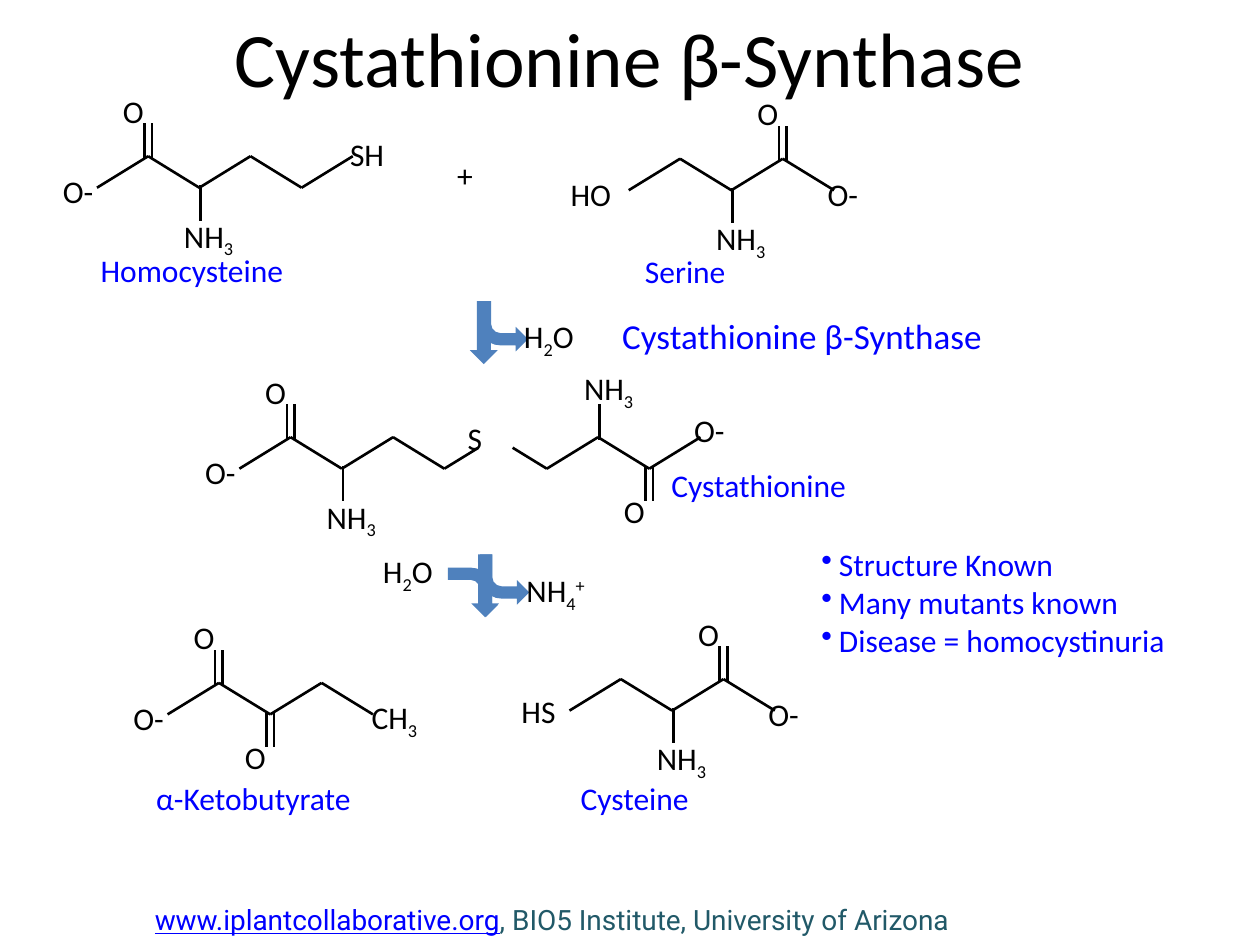
from dataclasses import dataclass

import pptx
import pptx.dml.color
import pptx.enum.shapes
import pptx.enum.text
import pptx.oxml
import pptx.oxml.ns
import pptx.util
from pptx.util import Inches

SHAPES = pptx.enum.shapes.MSO_SHAPE
ANCHOR = pptx.enum.text.MSO_ANCHOR
ALIGN = pptx.enum.text.PP_ALIGN


@dataclass(frozen=True)
class Theme:
    black: str = "000000"
    blue: str = "0000FF"
    teal: str = "215968"
    arrow: str = "4F81BD"
    font: str = "Calibri"
    footer_font: str = "Roboto"
    title_size: int = 44
    enzyme_size: int = 20
    body_size: int = 18
    footer_size: int = 16
    bond_width: float = 1.5


THEME = Theme()

# Each formula is a series of (text, baseline shift in percent).
AMINO = (("NH", 0), ("3", -25))
METHYL = (("CH", 0), ("3", -25))
WATER = (("H", 0), ("2", -25), ("O", 0))
AMMONIUM = (("NH", 0), ("4", -25), ("+", 30))

BOND_RISE = 0.25
SIDE_BOND = 0.28
# (is double, points up) -> label offset from the carbon
SIDE_LABEL_OFFSETS = {
    (True, True): (-0.3, -0.56),
    (True, False): (-0.3, 0.14),
    (False, True): (-0.21, -0.59),
    (False, False): (-0.22, 0.18),
}


def add_run(paragraph, text, color=THEME.black, baseline=0, **formats):
    run = paragraph.add_run()
    run.text = text
    values = {"name": THEME.font, "size": pptx.util.Pt(THEME.body_size), **formats}
    for attribute, value in values.items():
        setattr(run.font, attribute, value)
    run.font.color.rgb = pptx.dml.color.RGBColor.from_string(color)
    if baseline:
        run.font._element.set("baseline", str(baseline * 1000))


def add_text_box(shapes, box, anchor=ANCHOR.TOP):
    frame = shapes.add_textbox(*map(Inches, box)).text_frame
    frame.word_wrap = True
    frame.vertical_anchor = anchor
    return frame


def add_label(shapes, left, top, content, width=0.72, color=THEME.black):
    """Place a plain text or a formula."""
    pieces = ((content, 0),) if isinstance(content, str) else content
    paragraph = add_text_box(shapes, (left, top, width, 0.4)).paragraphs[0]
    for text, baseline in pieces:
        add_run(paragraph, text, color, baseline)


def add_bond(shapes, start, end):
    bond = shapes.add_connector(
        pptx.enum.shapes.MSO_CONNECTOR.STRAIGHT, *map(Inches, (*start, *end))
    )
    bond.line.color.rgb = pptx.dml.color.RGBColor.from_string(THEME.black)
    bond.line.width = pptx.util.Pt(THEME.bond_width)
    bond._element.spPr.append(pptx.oxml.parse_xml(
        f'<a:effectLst {pptx.oxml.ns.nsdecls("a")}/>'
    ))


def add_molecule(slide, box, bonds, side_groups, labels, gap_atom=None):
    """Draw a zigzag chain that starts low; odd atoms sit high.

    box is the chain's left, top and width. side_groups maps an atom to its
    side formula, labels maps an atom to (formula, x offset, y offset), and
    the bonds that meet gap_atom are cut short to leave room for its letter.
    """
    shapes = slide.shapes.add_group_shape().shapes
    left, top, width = box
    atoms = [
        (left + i * width / bonds, top + (0 if i % 2 else BOND_RISE))
        for i in range(bonds + 1)
    ]

    def shorten(point, far):
        return tuple(p + (f - p) / 3 for p, f in zip(point, far))

    for i, (start, end) in enumerate(zip(atoms, atoms[1:])):
        if i == gap_atom:
            start = shorten(start, end)
        elif i + 1 == gap_atom:
            end = shorten(end, start)
        add_bond(shapes, start, end)

    for i, formula in side_groups.items():
        x, y = atoms[i]
        up, double = bool(i % 2), formula == "O"
        direction = -1 if up else 1
        begin = y - 0.02 * direction
        for offset in (-0.03, 0.03) if double else (0.01,):
            add_bond(shapes, (x + offset, begin),
                     (x + offset, begin + SIDE_BOND * direction))
        dx, dy = SIDE_LABEL_OFFSETS[double, up]
        add_label(shapes, x + dx, y + dy, formula)

    for i, (formula, dx, dy) in labels.items():
        add_label(shapes, atoms[i][0] + dx, atoms[i][1] + dy, formula)


def add_arrow(shapes, kind, box, rotation=0, flip=False):
    arrow = shapes.add_shape(kind, *map(Inches, box))
    arrow.shadow.inherit = False
    arrow.fill.solid()
    arrow.fill.fore_color.rgb = pptx.dml.color.RGBColor.from_string(THEME.arrow)
    arrow.line.fill.background()
    arrow.rotation = rotation
    if flip:
        arrow._element.spPr.xfrm.set("flipV", "1")


def add_reaction_arrow(slide, left, top, has_input=False):
    shapes = slide.shapes.add_group_shape().shapes
    add_arrow(shapes, SHAPES.DOWN_ARROW, (left, top, 0.22, 0.5))
    add_arrow(shapes, SHAPES.BENT_ARROW, (left + 0.07, top, 0.39, 0.4), flip=True)
    if has_input:
        add_arrow(shapes, SHAPES.BENT_ARROW,
                  (left - 0.18, top + 0.1, 0.39, 0.4), rotation=90)


def add_title(slide, box, text):
    title = slide.shapes.title
    for attribute, value in zip(("left", "top", "width", "height"), box):
        setattr(title, attribute, Inches(value))
    title.text_frame.vertical_anchor = ANCHOR.MIDDLE
    paragraph = title.text_frame.paragraphs[0]
    paragraph.alignment = ALIGN.CENTER
    add_run(paragraph, text, size=pptx.util.Pt(THEME.title_size))


def add_bullets(slide, box, items):
    frame = add_text_box(slide.shapes, box)
    for i, item in enumerate(items):
        paragraph = frame.add_paragraph() if i else frame.paragraphs[0]
        properties = paragraph._p.get_or_add_pPr()
        properties.set("marL", str(Inches(0.14)))
        properties.set("indent", str(-Inches(0.14)))
        properties.append(pptx.oxml.parse_xml(
            f'<a:buChar {pptx.oxml.ns.nsdecls("a")} char="•"/>'
        ))
        add_run(paragraph, item, THEME.blue)


def add_footer(slide, box):
    paragraph = add_text_box(slide.shapes, box, ANCHOR.MIDDLE).paragraphs[0]
    formats = {"name": THEME.footer_font, "size": pptx.util.Pt(THEME.footer_size)}
    add_run(paragraph, "www.iplantcollaborative.org", THEME.blue,
            underline=True, **formats)
    add_run(paragraph, ", BIO5 Institute, University of Arizona", THEME.teal, **formats)


def main():
    presentation = pptx.Presentation()
    presentation.slide_width, presentation.slide_height = Inches(10), Inches(7.5)
    slide = presentation.slides.add_slide(presentation.slide_layouts[5])
    enzyme = "Cystathionine β-Synthase"
    add_footer(slide, (1.13, 7.1, 6.91, 0.4))
    add_title(slide, (0.5, 0.03, 9, 0.84), enzyme)

    left_oxygen = ("O-", -0.37, -0.17)
    right_oxygen = ("O-", -0.15, -0.17)
    add_molecule(slide, (0.77, 1.24, 2.03), 5, {1: "O", 2: AMINO},
                 {0: left_oxygen, 5: ("SH", -0.12, -0.22)})
    add_molecule(slide, (4.99, 1.26, 1.63), 4, {3: "O", 2: AMINO},
                 {0: ("HO", -0.56, -0.17), 4: right_oxygen})
    add_molecule(slide, (1.9, 3.47, 3.66), 9, {1: "O", 2: AMINO, 7: AMINO, 8: "O"},
                 {0: left_oxygen, 5: ("S", -0.32, -0.19), 9: ("O-", -0.15, -0.26)},
                 gap_atom=5)
    add_molecule(slide, (1.33, 5.42, 1.63), 4, {1: "O", 2: "O"},
                 {0: left_oxygen, 4: (METHYL, -0.11, -0.18)})
    add_molecule(slide, (4.52, 5.39, 1.63), 4, {3: "O", 2: AMINO},
                 {0: ("HS", -0.48, -0.2), 4: right_oxygen})

    add_reaction_arrow(slide, 3.73, 2.39)
    add_reaction_arrow(slide, 3.74, 4.4, has_input=True)
    for left, top, formula in (
        (3.53, 1.19, "+"),
        (4.06, 2.47, WATER),
        (2.94, 4.33, WATER),
        (4.08, 4.48, AMMONIUM),
    ):
        add_label(slide.shapes, left, top, formula, 0.78)

    for left, top, name in (
        (0.7, 1.94, "Homocysteine"),
        (5.02, 1.95, "Serine"),
        (1.14, 6.13, "α-Ketobutyrate"),
        (4.51, 6.13, "Cysteine"),
        (5.23, 3.65, "Cystathionine"),
    ):
        add_label(slide.shapes, left, top, name, 1.88, THEME.blue)

    paragraph = add_text_box(slide.shapes, (4.41, 2.45, 3.91, 0.48)).paragraphs[0]
    paragraph.alignment = ALIGN.CENTER
    add_run(paragraph, enzyme, THEME.blue, size=pptx.util.Pt(THEME.enzyme_size))
    add_bullets(slide, (6.42, 4.28, 3.49, 1.31),
                ("Structure Known", "Many mutants known", "Disease = homocystinuria"))
    presentation.save("out.pptx")


if __name__ == "__main__":
    main()
